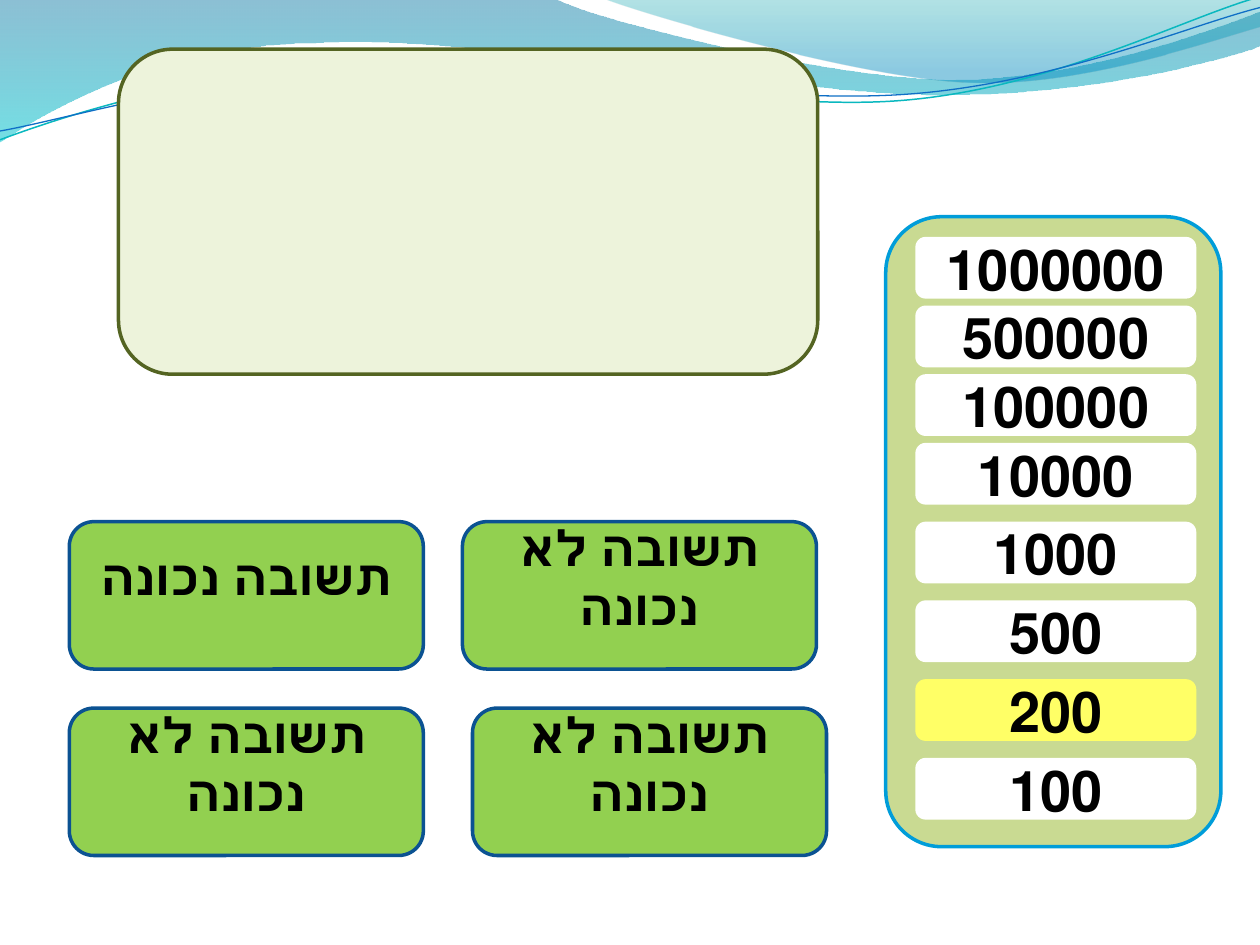
from pptx import Presentation, util as u
from pptx.dml.color import RGBColor
from pptx.enum import shapes, text
from pptx.oxml.ns import qn
from lxml import etree

# Grid of 100 columns by 75 rows
COLS, ROWS = 100, 75
CELL = u.Inches(0.1)
FONT = "Cambria"

BLACK = RGBColor(0x00, 0x00, 0x00)
WHITE = RGBColor(0xFF, 0xFF, 0xFF)
YELLOW = RGBColor(0xFF, 0xFF, 0x66)
GREEN = RGBColor(0x92, 0xD0, 0x50)
NAVY = RGBColor(0x0B, 0x52, 0x92)
PALE = RGBColor(0xED, 0xF3, 0xDB)
OLIVE = RGBColor(0x54, 0x64, 0x22)
SAGE = RGBColor(0xC9, 0xDA, 0x92)
SKY = RGBColor(0x00, 0x9D, 0xD9)
DEEP = RGBColor(0x00, 0x74, 0xA1)
AQUA = RGBColor(0x00, 0xC6, 0xCF)
TEAL = RGBColor(0x00, 0xA1, 0xA9)
OCEAN = RGBColor(0x00, 0x8B, 0xBF)
CYAN = RGBColor(0x0A, 0xB8, 0xBF)
BLUE = RGBColor(0x0F, 0x6F, 0xC6)

# Each wave starts at a point; 2 numbers add a line, 6 add a curve
BROAD_WAVE = [(0, -0.1), (44, -0.1), (47.6, 1.7, 66.4, 6.3, 75.8, 6.3),
              (85.3, 6.3, 95.8, 2.6, 100, 0.9), (100.1, 3.6),
              (98.3, 4.4, 87, 7.6, 74.6, 7.5), (62.2, 7.5, 38.2, 2.8, 25.7, 3.4),
              (12.9, 3.5, 4.6, 8.3, -0.1, 11.3)]
RIGHT_WAVE = [(47.9, -0.1), (50.9, 1.1, 68.2, 6.2, 76.9, 6.5),
              (85.6, 6.9, 96.1, 3.2, 100, 2.1), (100, 0)]
CYAN_STRAND = [(0, 11.1), (4.8, 9.3, 15.8, 5.7, 27.7, 5.2),
               (39.5, 4.7, 59.3, 8.9, 71.3, 8), (83.3, 7.1, 93.8, 1.5, 99.8, -0.2)]
BLUE_STRAND = [(0, 10.4), (4.7, 9.6, 16.4, 6.1, 28.3, 5.6),
               (40.3, 5.1, 59.7, 8.3, 71.7, 7.5), (83.6, 6.7, 94.1, 2.1, 100, 0.6)]

WRONG, RIGHT = "תשובה לא נכונה", "תשובה נכונה"
ANSWERS = [(5.5, 41.4, RIGHT), (36.7, 41.4, WRONG),
           (5.5, 56.2, WRONG), (37.5, 56.2, WRONG)]
PRIZES = ["1000000", "500000", "100000", "10000", "1000", "500", "200", "100"]
CURRENT = "200"


def add_outline(s, segments, close):
    points = [(round(seg[i] * CELL), round(seg[i + 1] * CELL))
              for seg in segments for i in range(0, len(seg), 2)]
    builder = s.shapes.build_freeform(*points[0], scale=1.0)
    builder.add_line_segments(points[1:], close=close)
    sp = builder.convert_to_shape()
    sp.shadow.inherit = False
    # Join the three points of each curve into one Bézier step
    lines = iter(list(sp._element.iter(qn("a:lnTo"))))
    for seg in segments[1:]:
        steps = [next(lines) for _ in range(len(seg) // 2)]
        if len(steps) == 3:
            curve = etree.Element(qn("a:cubicBezTo"))
            steps[0].addprevious(curve)
            for step in steps:
                curve.append(step[0])
                step.getparent().remove(step)
    return sp


def add_wave(s, segments, stops):
    sp = add_outline(s, segments, True)
    sp.line.fill.background()
    sp.fill.gradient()
    sp.fill.gradient_angle = 270
    for stop, (position, color, _) in zip(sp.fill.gradient_stops, stops):
        stop.position = position
        stop.color.rgb = color
    # Opacity of each stop
    for clr, (_, _, opacity) in zip(sp._element.spPr.iter(qn("a:srgbClr")), stops):
        etree.SubElement(clr, qn("a:alpha"), val=str(opacity * 1000))


def add_strand(s, segments, color, width):
    sp = add_outline(s, segments, False)
    sp.fill.background()
    sp.line.color.rgb = color
    sp.line.width = u.Pt(width)


def add_box(s, col, row, cols, rows, fill, line=None,
            kind=shapes.MSO_SHAPE.ROUNDED_RECTANGLE):
    sp = s.shapes.add_shape(kind, *(round(n * CELL) for n in (col, row, cols, rows)))
    sp.shadow.inherit = False
    sp.fill.solid()
    sp.fill.fore_color.rgb = fill
    if line is None:
        sp.line.fill.background()
    else:
        sp.line.color.rgb = line
        sp.line.width = u.Pt(2)
    return sp


def add_label(sp, label, size, bottom=0.05):
    tf = sp.text_frame
    frame = {"word_wrap": True, "vertical_anchor": text.MSO_ANCHOR.MIDDLE,
             "margin_bottom": u.Inches(bottom)}
    for name, value in frame.items():
        setattr(tf, name, value)
    p = tf.paragraphs[0]
    p.alignment = text.PP_ALIGN.CENTER
    p._p.get_or_add_pPr().set("rtl", "1")
    r = p.add_run()
    r.text = label
    for name, value in {"size": u.Pt(size), "bold": True, "name": FONT}.items():
        setattr(r.font, name, value)
    r.font.color.rgb = BLACK


def main():
    prs = Presentation()
    prs.slide_width, prs.slide_height = COLS * CELL, ROWS * CELL
    s = prs.slides.add_slide(prs.slide_layouts[6])

    # Wave decoration
    add_wave(s, BROAD_WAVE, [(0, DEEP, 45), (1, AQUA, 55)])
    add_wave(s, RIGHT_WAVE, [(0, TEAL, 30), (0.8, OCEAN, 45)])
    add_strand(s, CYAN_STRAND, CYAN, 0.85)
    add_strand(s, BLUE_STRAND, BLUE, 0.75)

    # Question panel
    add_box(s, 9.4, 3.9, 55.5, 25.8, PALE, OLIVE,
            shapes.MSO_SHAPE.FLOWCHART_ALTERNATE_PROCESS)

    # Answers
    for col, row, label in ANSWERS:
        add_label(add_box(s, col, row, 28.1, 11.7, GREEN, NAVY), label, 28, 0.35)

    # Prize ladder: the lower steps are set wider apart
    add_box(s, 70.3, 17.2, 26.6, 50, SAGE, SKY)
    row = 18.8
    for i, prize in enumerate(PRIZES):
        fill = YELLOW if prize == CURRENT else WHITE
        add_label(add_box(s, 72.65, row, 22.3, 4.9, fill), prize, 32)
        row += 5.45 if i < 3 else 6.25

    prs.save("out.pptx")


if __name__ == "__main__":
    main()
